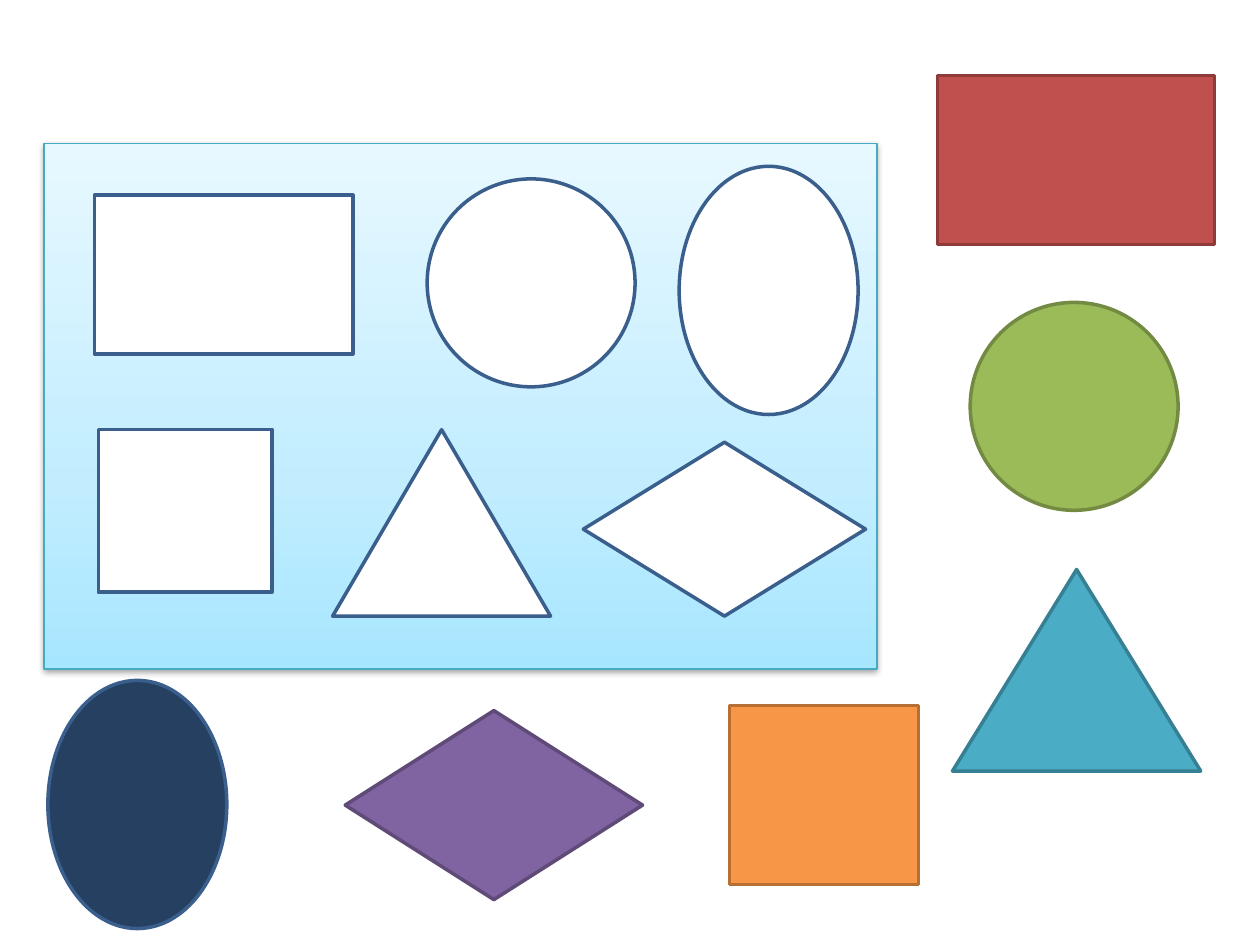
import copy
from dataclasses import dataclass

import lxml.etree
import pptx
import pptx.dml.color
import pptx.enum.shapes
import pptx.oxml.ns
import pptx.util

KINDS = pptx.enum.shapes.MSO_SHAPE
COLUMNS, ROWS = 100, 75  # square grid cells over the whole slide


@dataclass(frozen=True)
class Theme:
    width: float = 10
    height: float = 7.5
    cutout: tuple = ("FFFFFF", "3A5F8C")
    red: tuple = ("C0504D", "8E3B39")
    green: tuple = ("9BBB59", "738A42")
    navy: tuple = ("254061", "3A5F8C")
    teal: tuple = ("4BACC6", "377F92")
    purple: tuple = ("8064A2", "5F4A78")
    orange: tuple = ("F79646", "B76F34")
    piece_line: float = 2
    board_edge: str = "46AAC5"
    board_line: float = 0.75
    board_stops: tuple = ((0, "A7E6FF"), (0.35, "C1EDFF"), (1, "E7F8FF"))
    shadow: str = "000000"


THEME = Theme()


def rgb(value):
    return pptx.dml.color.RGBColor.from_string(value)


def add_outlined(slide, kind, box, edge, weight):
    """Place a shape; box is left, top, width, height in grid cells."""
    left, top, width, height = box
    across, down = THEME.width / COLUMNS, THEME.height / ROWS
    shape = slide.shapes.add_shape(
        kind,
        pptx.util.Inches(left * across), pptx.util.Inches(top * down),
        pptx.util.Inches(width * across), pptx.util.Inches(height * down))
    shape.shadow.inherit = False
    shape.line.color.rgb = rgb(edge)
    shape.line.width = pptx.util.Pt(weight)
    return shape


def add_pieces(slide, region, pieces):
    """Place solid pieces at offsets from the region's top left corner."""
    for kind, (left, top, width, height), (fill, edge) in pieces:
        box = (region[0] + left, region[1] + top, width, height)
        piece = add_outlined(slide, kind, box, edge, THEME.piece_line)
        piece.fill.solid()
        piece.fill.fore_color.rgb = rgb(fill)


def fill_board(board):
    # Three-stop gradient, rising from the bottom edge
    board.fill.gradient()
    board.fill.gradient_angle = 90
    properties = board._element.spPr
    stop_list = properties.find(".//" + pptx.oxml.ns.qn("a:gsLst"))
    stop_list.insert(1, copy.deepcopy(stop_list[0]))
    for stop, (position, color) in zip(board.fill.gradient_stops, THEME.board_stops):
        stop.position = position
        stop.color.rgb = rgb(color)

    # Soft shadow below the board
    effects = properties.find(pptx.oxml.ns.qn("a:effectLst"))
    shadow = lxml.etree.SubElement(
        effects, pptx.oxml.ns.qn("a:outerShdw"),
        blurRad=str(pptx.util.Pt(3.1)), dist=str(pptx.util.Pt(1.6)),
        dir="5400000", rotWithShape="0")
    color = lxml.etree.SubElement(
        shadow, pptx.oxml.ns.qn("a:srgbClr"), val=THEME.shadow)
    lxml.etree.SubElement(color, pptx.oxml.ns.qn("a:alpha"), val="38000")


def add_board(slide, region):
    board = add_outlined(slide, KINDS.RECTANGLE, region,
                         THEME.board_edge, THEME.board_line)
    fill_board(board)
    cutouts = (
        # Upper row
        (KINDS.RECTANGLE, (4, 4.1, 20.5, 12.6)),
        (KINDS.OVAL, (30.4, 2.8, 16.5, 16.5)),
        (KINDS.OVAL, (50.4, 1.8, 14.2, 19.7)),
        # Lower row
        (KINDS.ISOSCELES_TRIANGLE, (22.9, 22.7, 17.3, 14.8)),
        (KINDS.RECTANGLE, (4.3, 22.7, 13.8, 12.9)),
        (KINDS.FLOWCHART_DECISION, (42.8, 23.7, 22.4, 13.8)),
    )
    add_pieces(slide, region, [(*cutout, THEME.cutout) for cutout in cutouts])


def add_side_pieces(slide, region):
    add_pieces(slide, region, (
        (KINDS.RECTANGLE, (0, 0, 22, 13.4), THEME.red),
        (KINDS.OVAL, (2.6, 18, 16.5, 16.5), THEME.green),
        (KINDS.ISOSCELES_TRIANGLE, (1.2, 39.2, 19.7, 16), THEME.teal),
    ))


def add_bottom_pieces(slide, region):
    add_pieces(slide, region, (
        (KINDS.OVAL, (0, 0, 14.2, 19.7), THEME.navy),
        (KINDS.FLOWCHART_DECISION, (23.6, 2.4, 23.6, 15), THEME.purple),
        (KINDS.RECTANGLE, (54.1, 2, 15, 14.2), THEME.orange),
    ))


def main():
    deck = pptx.Presentation()
    deck.slide_width = pptx.util.Inches(THEME.width)
    deck.slide_height = pptx.util.Inches(THEME.height)
    slide = deck.slides.add_slide(deck.slide_layouts[6])
    add_board(slide, (3.5, 11.4, 66.1, 41.7))
    add_side_pieces(slide, (74.4, 6))
    add_bottom_pieces(slide, (3.8, 54))
    deck.save("out.pptx")


if __name__ == "__main__":
    main()
